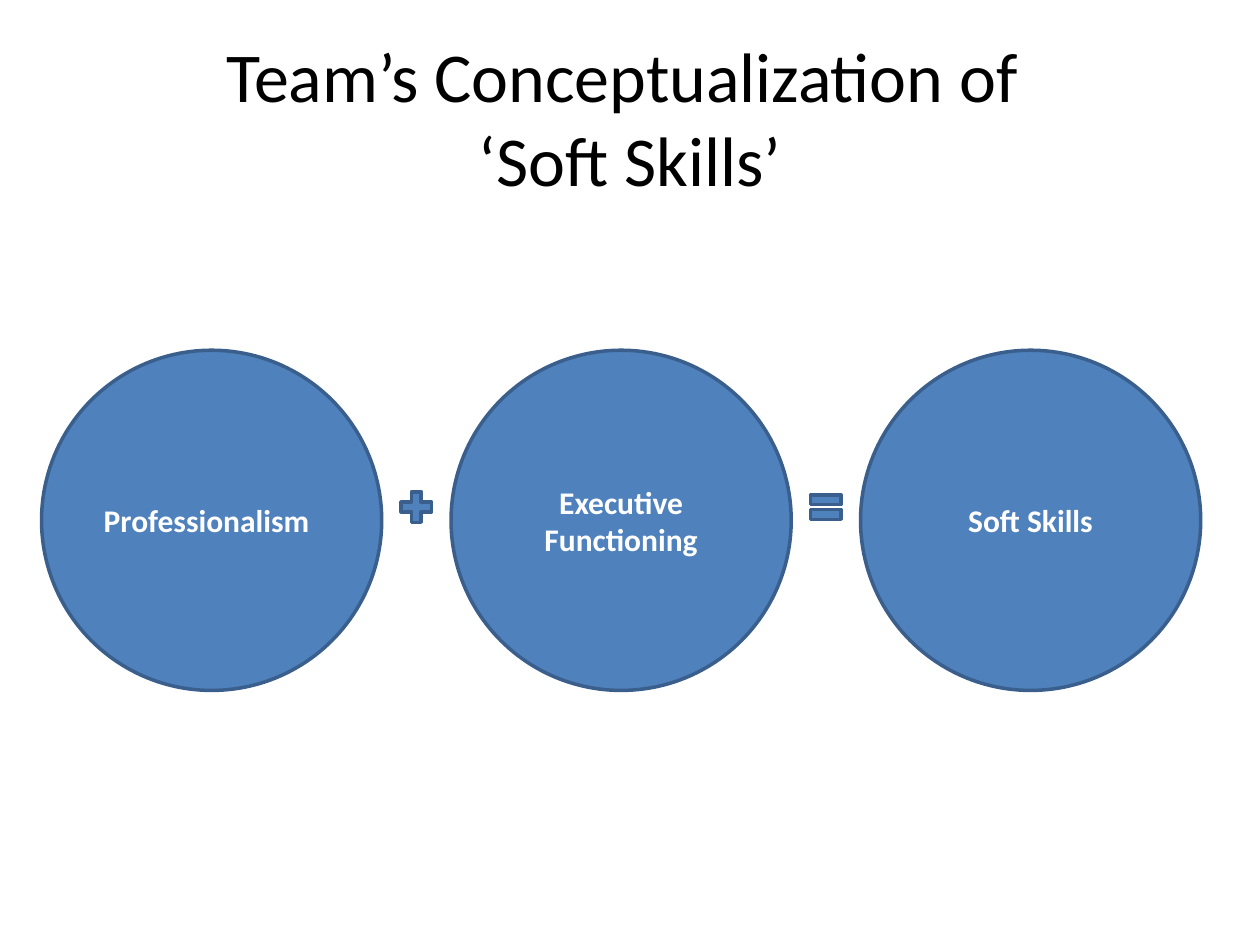
from dataclasses import dataclass

from pptx import Presentation
from pptx.dml.color import RGBColor
from pptx.enum.shapes import MSO_SHAPE as Preset
from pptx.enum.text import MSO_ANCHOR as Anchor, PP_ALIGN as Align
from pptx.shapes.autoshape import Shape
from pptx.slide import Slide
from pptx.text.text import TextFrame
from pptx.util import Inches, Pt

COLORS = {"fill": "4F81BD", "line": "3A5F8C", "title": "000000", "label": "FFFFFF"}
FONT = "Calibri"
CIRCLE_LEFT, CIRCLE_TOP, CIRCLE_SIZE = 0.33, 2.78, 2.7
GAP = 0.55
OPERATOR_TOP, OPERATOR_SIZE = 3.86, 0.33


@dataclass
class Term:
    label: str
    alignment: Align = Align.CENTER


TERMS = [
    Term("Professionalism", Align.LEFT),
    Term("Executive Functioning"),
    Term("Soft Skills"),
]
OPERATORS = [Preset.MATH_PLUS, Preset.MATH_EQUAL]


def write_text(
    text_frame: TextFrame, text: str, size: int, color: str, alignment: Align, bold: bool
) -> None:
    """Fill a text frame with one formatted paragraph."""
    text_frame.text = text
    text_frame.word_wrap = True
    text_frame.vertical_anchor = Anchor.MIDDLE
    paragraph = text_frame.paragraphs[0]
    paragraph.alignment = alignment
    for run in paragraph.runs:
        run.font.name = FONT
        run.font.size = Pt(size)
        run.font.bold = bold
        run.font.color.rgb = RGBColor.from_string(COLORS[color])


def add_square_shape(slide: Slide, preset: Preset, left: float, top: float, size: float) -> Shape:
    """Add an outlined shape of equal width and height."""
    shape = slide.shapes.add_shape(preset, Inches(left), Inches(top), Inches(size), Inches(size))
    shape.shadow.inherit = False
    shape.fill.solid()
    shape.fill.fore_color.rgb = RGBColor.from_string(COLORS["fill"])
    shape.line.color.rgb = RGBColor.from_string(COLORS["line"])
    shape.line.width = Pt(2)
    return shape


def add_equation(slide: Slide) -> None:
    """Draw the terms as circles with an operator centred in each gap."""
    step = CIRCLE_SIZE + GAP
    for index, term in enumerate(TERMS):
        circle = add_square_shape(
            slide, Preset.OVAL, CIRCLE_LEFT + index * step, CIRCLE_TOP, CIRCLE_SIZE
        )
        write_text(circle.text_frame, term.label, 18, "label", term.alignment, True)
    first_left = CIRCLE_LEFT + CIRCLE_SIZE + (GAP - OPERATOR_SIZE) / 2
    for index, operator in enumerate(OPERATORS):
        add_square_shape(slide, operator, first_left + index * step, OPERATOR_TOP, OPERATOR_SIZE)


def main() -> None:
    """Build and save the slide."""
    presentation = Presentation()
    presentation.slide_width = Inches(10)
    presentation.slide_height = Inches(7.5)
    slide = presentation.slides.add_slide(presentation.slide_layouts[6])
    title = slide.shapes.add_textbox(Inches(0.5), Inches(0.3), Inches(9), Inches(1.25))
    write_text(
        title.text_frame,
        "Team’s Conceptualization of \v‘Soft Skills’",
        40,
        "title",
        Align.CENTER,
        False,
    )
    add_equation(slide)
    presentation.save("out.pptx")


if __name__ == "__main__":
    main()
